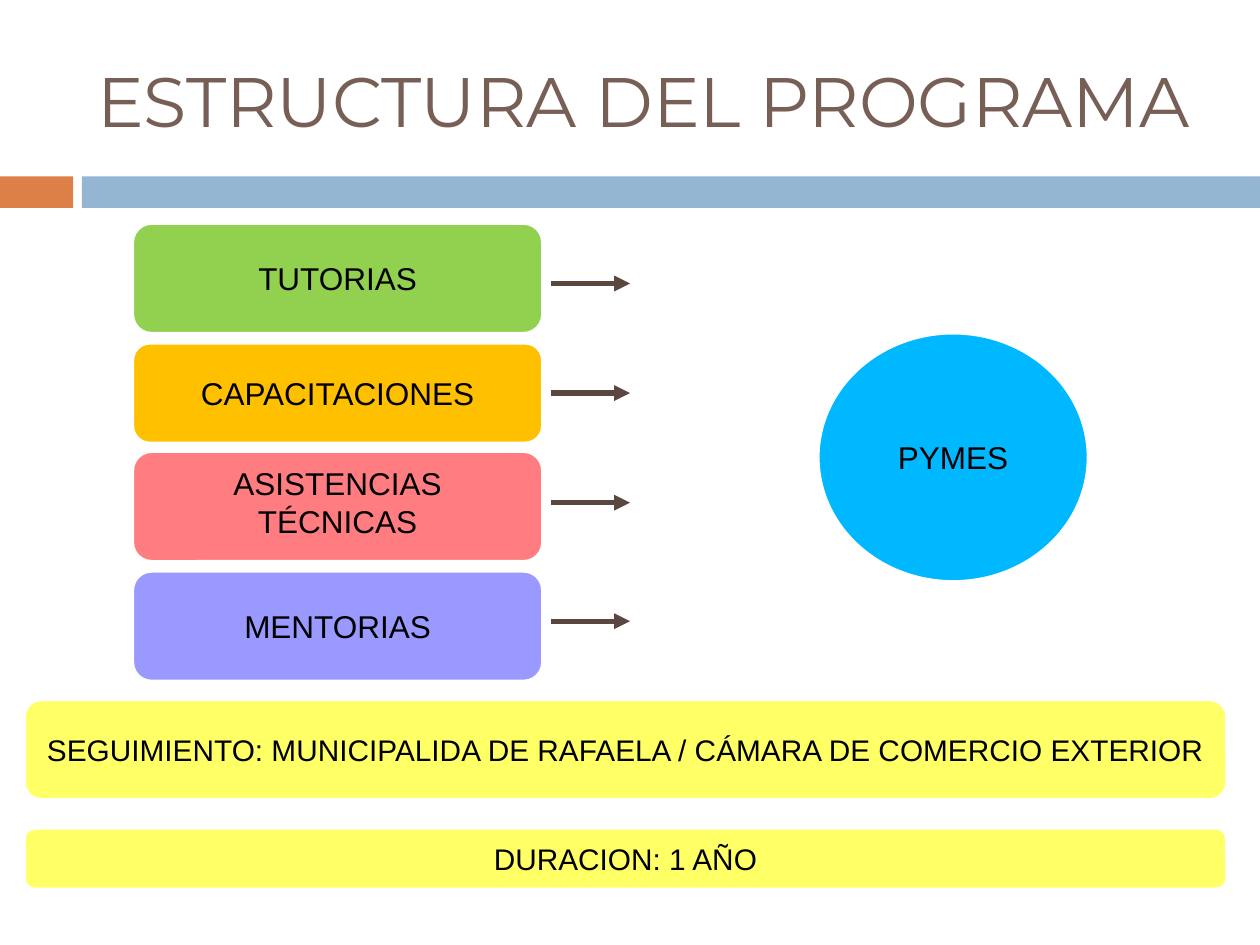
"""Build the programme structure slide."""
import pptx
import pptx.dml.color
import pptx.enum.shapes
import pptx.enum.text
import pptx.oxml.ns
import pptx.util
from lxml import etree

Inches = pptx.util.Inches
Pt = pptx.util.Pt
RGBColor = pptx.dml.color.RGBColor
MSO_SHAPE = pptx.enum.shapes.MSO_SHAPE
MSO_ANCHOR = pptx.enum.text.MSO_ANCHOR
PP_ALIGN = pptx.enum.text.PP_ALIGN
qn = pptx.oxml.ns.qn

WHITE = RGBColor(0xFF, 0xFF, 0xFF)
BLACK = RGBColor(0x00, 0x00, 0x00)
BROWN = RGBColor(0x77, 0x5F, 0x55)
DARK_BROWN = RGBColor(0x59, 0x47, 0x40)
ORANGE = RGBColor(0xDD, 0x80, 0x47)
BLUE_GREY = RGBColor(0x94, 0xB6, 0xD2)
GREEN = RGBColor(0x92, 0xD0, 0x50)
AMBER = RGBColor(0xFF, 0xC0, 0x00)
PINK = RGBColor(0xFF, 0x7C, 0x80)
VIOLET = RGBColor(0x99, 0x99, 0xFF)
CYAN = RGBColor(0x00, 0xB8, 0xFF)
YELLOW = RGBColor(0xFF, 0xFF, 0x66)


class Deck:
    title_font = "Montserrat"
    body_font = "Arial"

    def __init__(self, width, height):
        self.prs = pptx.Presentation()
        self.prs.slide_width = Inches(width)
        self.prs.slide_height = Inches(height)
        self.s = self.prs.slides.add_slide(self.prs.slide_layouts[5])

    def set_text(self, tf, text, size, font, color, align, anchor):
        tf.text = text
        tf.word_wrap = True
        tf.vertical_anchor = anchor
        p = tf.paragraphs[0]
        p.alignment = align
        r = p.runs[0]
        r.font.size = Pt(size)
        r.font.name = font
        r.font.color.rgb = color

    def title(self, text, left, top, width, height):
        sp = self.s.shapes.title
        sp.left, sp.top = Inches(left), Inches(top)
        sp.width, sp.height = Inches(width), Inches(height)
        self.set_text(sp.text_frame, text, 40, self.title_font, BROWN,
                      PP_ALIGN.LEFT, MSO_ANCHOR.MIDDLE)

    def shape(self, kind, left, top, width, height, fill, line=None):
        sp = self.s.shapes.add_shape(kind, Inches(left), Inches(top),
                                     Inches(width), Inches(height))
        sp.shadow.inherit = False
        sp.fill.solid()
        sp.fill.fore_color.rgb = fill
        if line is None:
            sp.line.fill.background()
        else:
            sp.line.color.rgb = line
            sp.line.width = Pt(0.75)
        return sp

    def label(self, kind, text, left, top, width, height, fill, size=18,
              inset=0.1, anchor=MSO_ANCHOR.MIDDLE):
        sp = self.shape(kind, left, top, width, height, fill, WHITE)
        tf = sp.text_frame
        tf.margin_left = tf.margin_right = Inches(inset)
        self.set_text(tf, text, size, self.body_font, BLACK,
                      PP_ALIGN.CENTER, anchor)

    def arrow(self, x1, x2, y):
        c = self.s.shapes.add_connector(
            pptx.enum.shapes.MSO_CONNECTOR.STRAIGHT,
            Inches(x1), Inches(y), Inches(x2), Inches(y))
        c.line.color.rgb = DARK_BROWN
        c.line.width = Pt(3)
        spPr = c.element.spPr
        etree.SubElement(spPr.find(qn("a:ln")), qn("a:tailEnd"), type="triangle")
        etree.SubElement(spPr, qn("a:effectLst"))


def main():
    deck = Deck(10, 7.5)
    deck.shape(MSO_SHAPE.RECTANGLE, 0, 1.4, 0.58, 0.25, ORANGE)
    deck.shape(MSO_SHAPE.RECTANGLE, 0.65, 1.4, 9.35, 0.25, BLUE_GREY)
    deck.title("ESTRUCTURA DEL PROGRAMA", 0.67, 0.25, 8.92, 1.08)

    services = [
        ("TUTORIAS", 1.78, 0.86, GREEN, MSO_ANCHOR.MIDDLE, 2.25),
        ("CAPACITACIONES", 2.73, 0.78, AMBER, MSO_ANCHOR.MIDDLE, 3.12),
        ("ASISTENCIAS TÉCNICAS", 3.59, 0.86, PINK, MSO_ANCHOR.TOP, 3.99),
        ("MENTORIAS", 4.54, 0.86, VIOLET, MSO_ANCHOR.MIDDLE, 4.93),
    ]
    for text, top, height, fill, anchor, arrow_y in services:
        deck.label(MSO_SHAPE.ROUNDED_RECTANGLE, text, 1.06, top, 3.24, height,
                   fill, inset=0.15, anchor=anchor)
        deck.arrow(4.37, 5, arrow_y)

    deck.label(MSO_SHAPE.OVAL, "PYMES", 6.5, 2.65, 2.13, 1.96, CYAN)

    banners = [
        ("SEGUIMIENTO: MUNICIPALIDA DE RAFAELA / CÁMARA DE COMERCIO EXTERIOR",
         5.56, 0.78),
        ("DURACION: 1 AÑO", 6.58, 0.47),
    ]
    for text, top, height in banners:
        deck.label(MSO_SHAPE.ROUNDED_RECTANGLE, text, 0.2, top, 9.53, height,
                   YELLOW, size=17)

    deck.prs.save("out.pptx")


if __name__ == "__main__":
    main()
